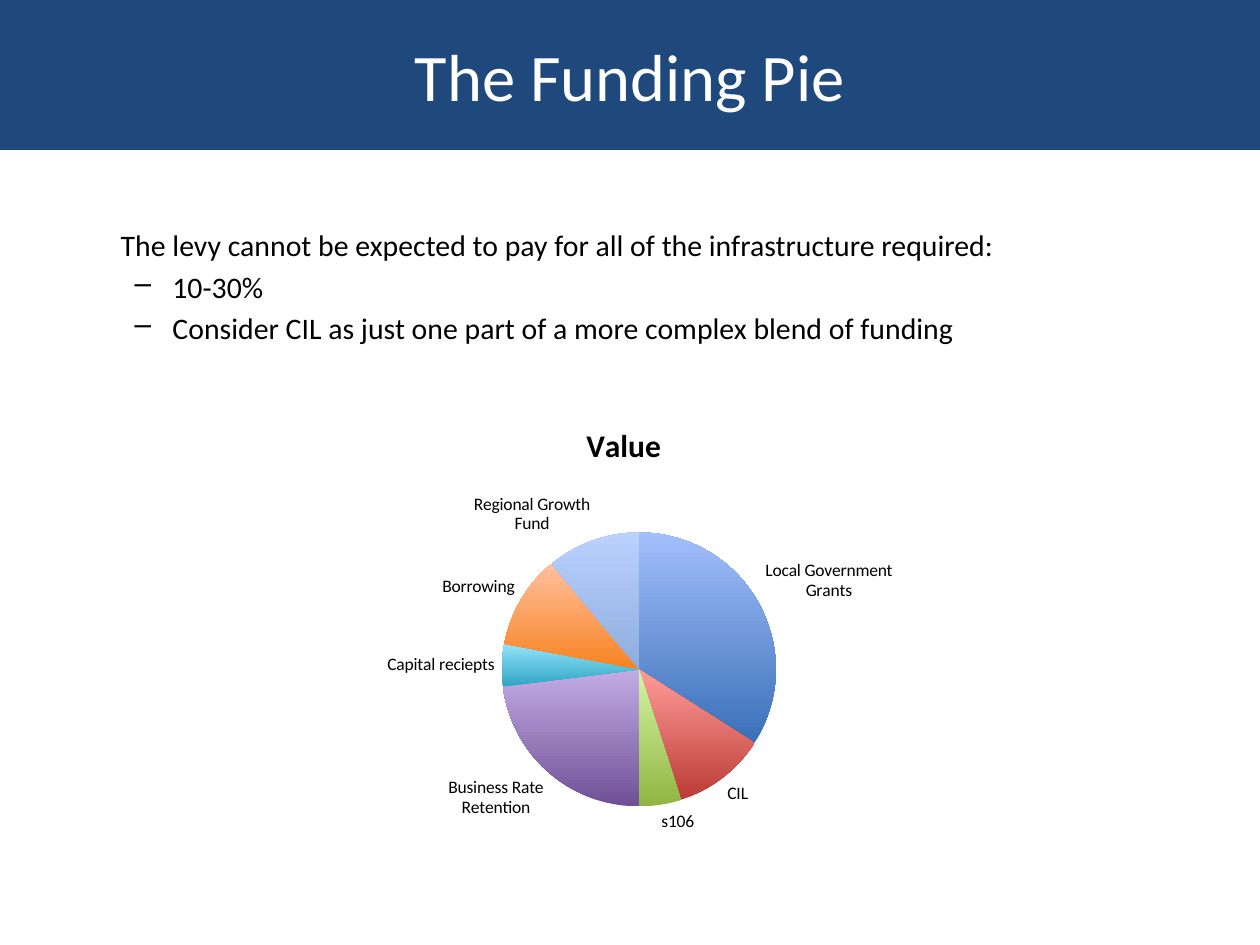
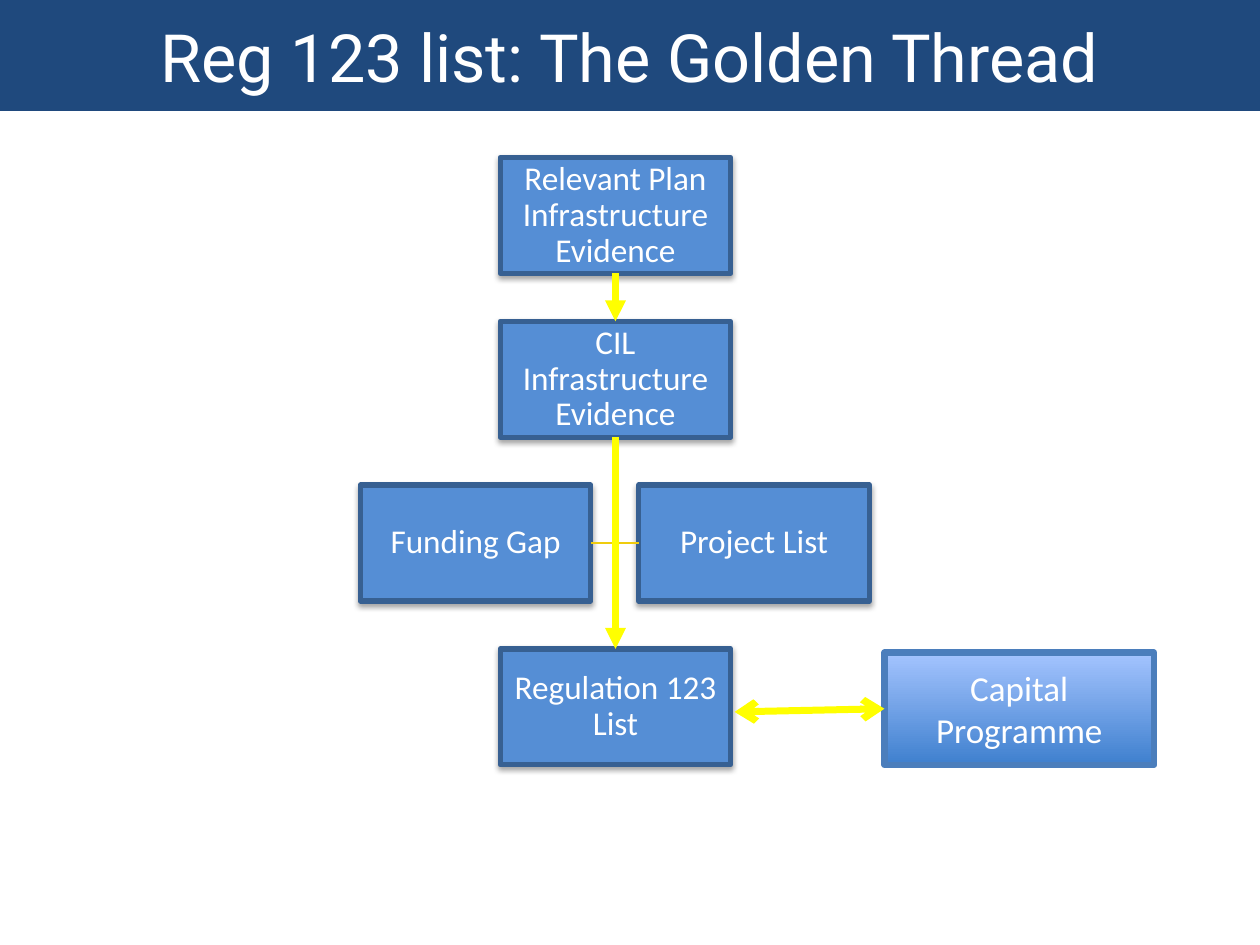
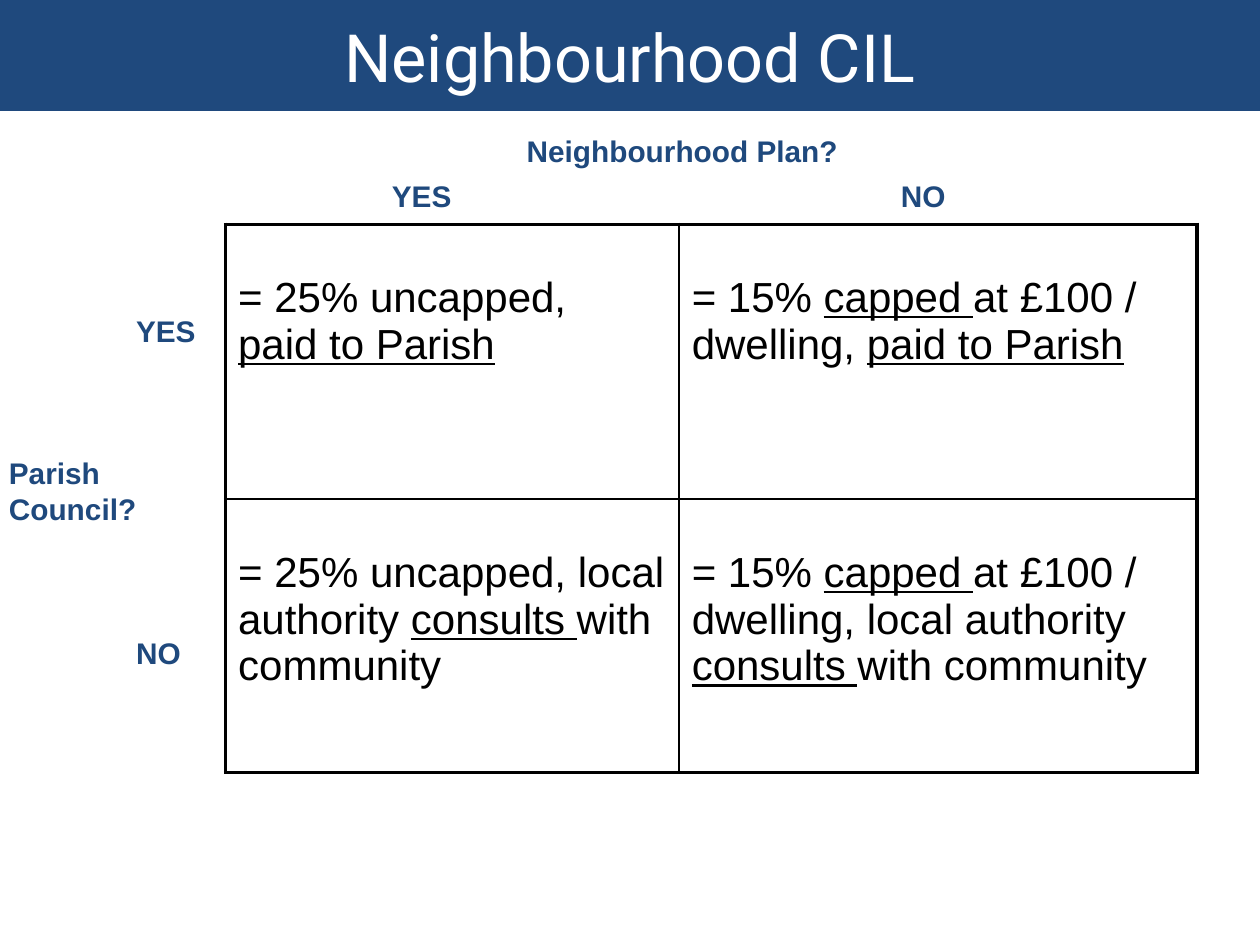
"""Build three slides on infrastructure funding and the community levy."""
from lxml.etree import SubElement
from pptx import Presentation
from pptx.chart.data import CategoryChartData
from pptx.dml.color import RGBColor
from pptx.enum.chart import XL_CHART_TYPE as CHART, XL_LABEL_POSITION as LABEL
from pptx.enum.shapes import MSO_CONNECTOR as CONN, MSO_SHAPE as SHAPE
from pptx.enum.text import MSO_ANCHOR as ANCHOR, MSO_AUTO_SIZE as AUTO, PP_ALIGN as ALIGN
from pptx.oxml import parse_xml
from pptx.oxml.ns import nsdecls, qn
from pptx.util import Inches, Pt

NAVY, WHITE, BLACK, YELLOW = "1F497D", "FFFFFF", "000000", "FFFF00"


def rgb(value):
    """Turn a hex string into a colour."""
    return RGBColor.from_string(value)


def style(tf, size, font, color, align=ALIGN.LEFT, bold=False):
    """Format every run of a text frame."""
    tf.word_wrap = True
    for p in tf.paragraphs:
        p.alignment = align
        for r in p.runs:
            r.font.size, r.font.name, r.font.bold = Pt(size), font, bold
            r.font.color.rgb = rgb(color)


prs = Presentation()
prs.slide_width, prs.slide_height = Inches(10), Inches(7.5)

slides = []
for text, height, font in [
    ("The Funding Pie", 1.19, "Calibri"),
    ("Reg 123 list: The Golden Thread", 0.88, "Roboto"),
    ("Neighbourhood CIL", 0.88, "Roboto"),
]:
    s = prs.slides.add_slide(prs.slide_layouts[5])
    title = s.shapes.title
    title.left, title.top, title.width, title.height = 0, 0, Inches(10), Inches(height)
    title.fill.solid()
    title.fill.fore_color.rgb = rgb(NAVY)
    tf = title.text_frame
    tf.text = text
    tf.auto_size, tf.vertical_anchor = AUTO.NONE, ANCHOR.MIDDLE
    style(tf, 38, font, WHITE, ALIGN.CENTER)
    slides.append(s)
pie_slide, thread_slide, parish_slide = slides

tf = pie_slide.shapes.add_textbox(Inches(0.5), Inches(1.75), Inches(7.82), Inches(1.89)).text_frame
tf.text = (
    "The levy cannot be expected to pay for all of the infrastructure required:\n"
    "10-30%\n"
    "Consider CIL as just one part of a more complex blend of funding"
)
tf.paragraphs[0]._p.get_or_add_pPr().set("marL", str(Inches(0.36)))
for p in tf.paragraphs[1:]:
    p.level = 1
    p.space_before = Pt(3.4)
    pPr = p._p.get_or_add_pPr()
    pPr.set("marL", str(Inches(0.77)))
    pPr.set("indent", str(Inches(-0.3)))
    SubElement(pPr, qn("a:buChar"), char="–")
style(tf, 17, "Calibri", BLACK)

sources = [
    ("Local Government Grants", 34, "3A70B8", "A2BFFB"),
    ("CIL", 11, "BC3B36", "FF9C99"),
    ("s106", 5, "91B541", "D5F5A5"),
    ("Business Rate Retention", 23, "6F5096", "C3ACE5"),
    ("Capital reciepts", 5, "2FA5C3", "95E4FC"),
    ("Borrowing", 11, "F78320", "FFBF9F"),
    ("Regional Growth Fund", 11, "8EADDD", "BBD1FF"),
]
data = CategoryChartData()
data.categories = [source[0] for source in sources]
data.add_series("Value", [source[1] for source in sources])
chart = pie_slide.shapes.add_chart(
    CHART.PIE, Inches(1.93), Inches(3.19), Inches(6.04), Inches(3.57), data
).chart
chart.has_legend = False
chart.font.size, chart.font.name = Pt(10), "Calibri"
chart.font.color.rgb = rgb(BLACK)
chart.has_title = True
tf = chart.chart_title.text_frame
tf.text = "Value"
font = tf.paragraphs[0].runs[0].font
font.size, font.bold, font.name = Pt(18), True, "Calibri"
font.color.rgb = rgb(BLACK)
plot = chart.plots[0]
plot.vary_by_categories = True
plot.has_data_labels = True
labels = plot.data_labels
labels.show_category_name, labels.show_value, labels.show_percentage = True, False, False
labels.position = LABEL.OUTSIDE_END
for i, (name, value, dark, light) in enumerate(sources):
    fill = plot.series[0].points[i].format.fill
    fill.gradient()
    fill.gradient_angle = 90
    for stop, color in zip(fill.gradient_stops, (dark, light)):
        stop.color.rgb = rgb(color)
area = chart._chartSpace.find(".//" + qn("c:plotArea"))
for old in area.findall(qn("c:layout")):
    area.remove(old)
area.insert(0, parse_xml(
    f'<c:layout {nsdecls("c")}><c:manualLayout><c:layoutTarget val="inner"/>'
    '<c:xMode val="edge"/><c:yMode val="edge"/><c:x val="0.34"/><c:y val="0.29"/>'
    '<c:w val="0.36"/><c:h val="0.61"/></c:manualLayout></c:layout>'
))

boxes = {}
for text, x, y in [
    ("Relevant Plan Infrastructure Evidence", 3.97, 1.25),
    ("CIL Infrastructure Evidence", 3.97, 2.55),
    ("Regulation 123 List", 3.97, 5.15),
    ("Funding Gap", 2.86, 3.85),
    ("Project List", 5.07, 3.85),
    ("Capital Programme", 7.02, 5.18),
]:
    capital = text == "Capital Programme"
    width, height = (2.14, 0.89) if capital else (1.83, 0.92)
    sp = thread_slide.shapes.add_shape(
        SHAPE.RECTANGLE, Inches(x), Inches(y), Inches(width), Inches(height)
    )
    sp.shadow.inherit = False
    tf = sp.text_frame
    tf.text = text
    tf.vertical_anchor = ANCHOR.MIDDLE
    style(tf, 20 if capital else 19, "Calibri", WHITE, ALIGN.CENTER)
    sp.line.color.rgb = rgb("4B7EBC" if capital else "376092")
    sp.line.width = Pt(3.75 if capital else 3)
    if capital:
        sp.fill.gradient()
        sp.fill.gradient_angle = 90
        for stop, color in zip(sp.fill.gradient_stops, ("3F80CE", "A4C4FF")):
            stop.color.rgb = rgb(color)
    else:
        sp.fill.solid()
        sp.fill.fore_color.rgb = rgb("558ED5")
        tf.margin_left = tf.margin_right = tf.margin_top = tf.margin_bottom = Inches(0.01)
        tf.paragraphs[0].line_spacing = 0.9
        sp._element.spPr.find(qn("a:effectLst")).append(parse_xml(
            f'<a:outerShdw {nsdecls("a")} blurRad="{Pt(3.1)}" dist="{Pt(1.8)}" dir="5400000" '
            f'rotWithShape="0"><a:srgbClr val="{BLACK}"><a:alpha val="35000"/></a:srgbClr>'
            '</a:outerShdw>'
        ))
    boxes[text] = sp
plan, evidence, regulation, gap, projects, programme = boxes.values()

for start, start_side, end, end_side, color, width, arrows in [
    (gap, 3, projects, 1, "EFCC0E", 0.75, {}),
    (evidence, 2, regulation, 0, YELLOW, 4, {"tailEnd": "triangle"}),
    (plan, 2, evidence, 0, YELLOW, 4, {"tailEnd": "triangle"}),
    (None, None, programme, 1, YELLOW, 4, {"headEnd": "arrow", "tailEnd": "arrow"}),
]:
    cx = thread_slide.shapes.add_connector(
        CONN.STRAIGHT, Inches(5.83), Inches(5.65), Inches(7.02), Inches(5.63)
    )
    if start:
        cx.begin_connect(start, start_side)
    cx.end_connect(end, end_side)
    cx.line.color.rgb = rgb(color)
    cx.line.width = Pt(width)
    for tag, kind in arrows.items():
        SubElement(cx.line._get_or_add_ln(), qn("a:" + tag), type=kind)
    SubElement(cx._element.spPr, qn("a:effectLst"))

table = parish_slide.shapes.add_table(
    2, 2, Inches(1.79), Inches(1.78), Inches(7.71), Inches(4.35)
).table
table.first_row = table.horz_banding = False
for i, width in enumerate((3.6, 4.11)):
    table.columns[i].width = Inches(width)
for i, height in enumerate((2.18, 2.17)):
    table.rows[i].height = Inches(height)
answers = [
    ["= 25% uncapped,\n_paid to Parish",
     "= 15% _capped _at £100 / dwelling, _paid to Parish"],
    ["= 25% uncapped, local authority _consults _with community",
     "= 15% _capped _at £100 / dwelling, local authority _consults _with community"],
]
for row, texts in enumerate(answers):
    for col, text in enumerate(texts):
        cell = table.cell(row, col)
        cell.fill.background()
        cell.margin_top = Inches(0.4)
        p = cell.text_frame.paragraphs[0]
        for i, part in enumerate(text.split("_")):
            r = p.add_run()
            r.text = part.rstrip("\n")
            r.font.underline = i % 2 == 1
            if part.endswith("\n"):
                p.add_line_break()
        style(cell.text_frame, 24, "Arial", BLACK)
        outer = {"lnL": col == 0, "lnR": col == 1, "lnT": row == 0, "lnB": row == 1}
        for i, (tag, thick) in enumerate(outer.items()):
            cell._tc.get_or_add_tcPr().insert(i, parse_xml(
                f'<a:{tag} {nsdecls("a")} w="{Pt(2.25 if thick else 1)}"><a:solidFill>'
                f'<a:srgbClr val="{BLACK}"/></a:solidFill></a:{tag}>'
            ))

for text, x, y, width, height, align in [
    ("Parish Council?", 0, 3.57, 1.25, 0.94, ALIGN.LEFT),
    ("Neighbourhood Plan?", 3.69, 1.01, 3.45, 0.36, ALIGN.CENTER),
    ("YES", 1.01, 2.44, 0.77, 0.65, ALIGN.LEFT),
    ("YES", 3.04, 1.37, 0.77, 0.65, ALIGN.LEFT),
    ("NO", 1.01, 5, 0.77, 0.65, ALIGN.LEFT),
    ("NO", 7.08, 1.37, 0.77, 0.65, ALIGN.LEFT),
]:
    tf = parish_slide.shapes.add_textbox(
        Inches(x), Inches(y), Inches(width), Inches(height)
    ).text_frame
    tf.text = text
    tf.margin_left = tf.margin_right = Inches(0.07)
    tf.margin_top = tf.margin_bottom = Inches(0.04)
    style(tf, 17, "Arial", NAVY, align, bold=True)

prs.save("out.pptx")
